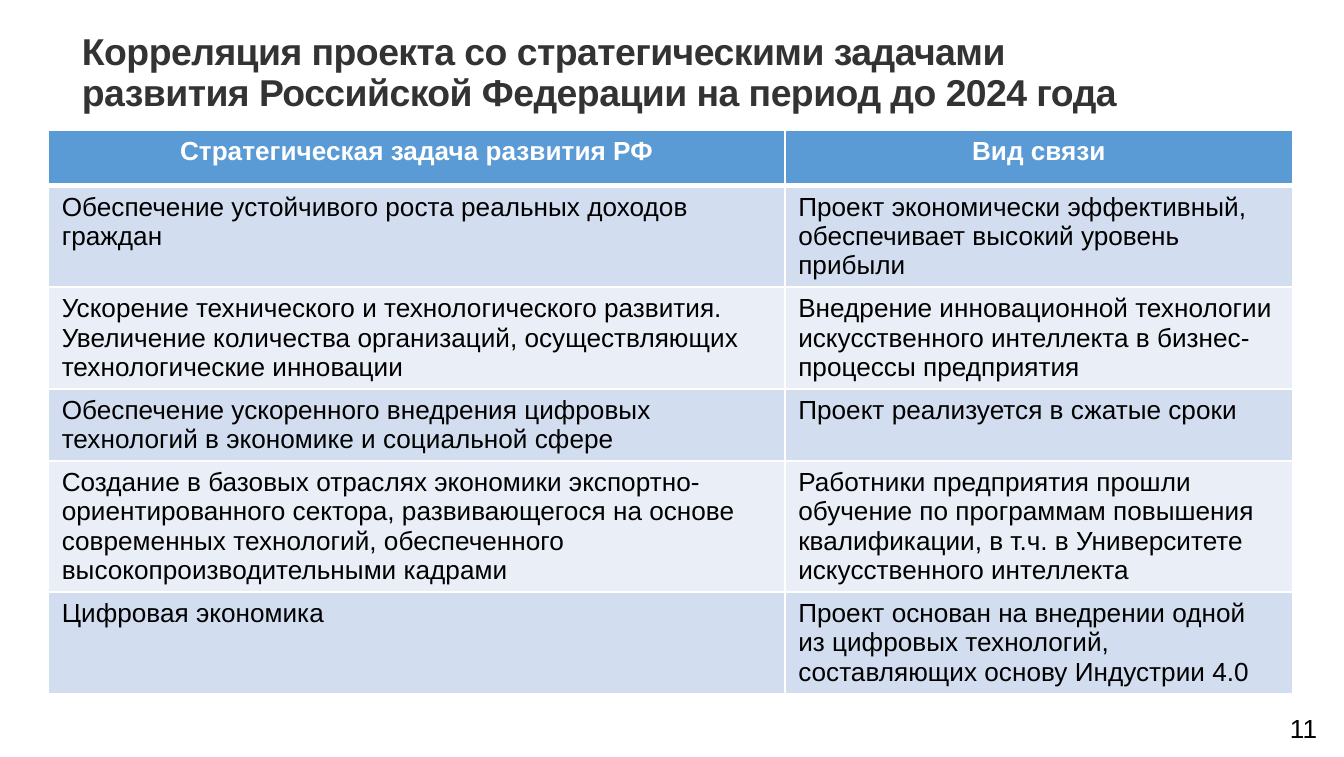
from lxml import etree
from pptx import Presentation
from pptx.dml.color import RGBColor
from pptx.enum.text import MSO_ANCHOR, MSO_AUTO_SIZE, PP_ALIGN
from pptx.oxml.ns import qn
from pptx.util import Inches, Pt

LEFT, CENTER = PP_ALIGN.LEFT, PP_ALIGN.CENTER
TOP = MSO_ANCHOR.TOP
NO_AUTOFIT, GROW = MSO_AUTO_SIZE.NONE, MSO_AUTO_SIZE.SHAPE_TO_FIT_TEXT

FONT = "Arial"
WHITE, BLACK, DARK_GREY = "FFFFFF", "000000", "333333"
HEADER_FILL = "5B9BD5"
BAND_FILLS = ("D2DEEF", "EAEFF7")
TITLE = ("Корреляция проекта со стратегическими задачами развития "
         "Российской Федерации на период до 2024 года")
COLUMN_WIDTHS = (5.48, 3.78)
ROW_HEIGHT = 0.41
ROWS = [
    ("Стратегическая задача развития РФ", "Вид связи"),
    ("Обеспечение устойчивого роста реальных доходов граждан",
     "Проект экономически эффективный, обеспечивает высокий уровень прибыли"),
    ("Ускорение технического и технологического развития. Увеличение количества "
     "организаций, осуществляющих технологические инновации",
     "Внедрение инновационной технологии искусственного интеллекта "
     "в бизнес-процессы предприятия"),
    ("Обеспечение ускоренного внедрения цифровых технологий "
     "в экономике и социальной сфере",
     "Проект реализуется в сжатые сроки"),
    ("Создание в базовых отраслях экономики экспортно-ориентированного сектора, "
     "развивающегося на основе современных технологий, обеспеченного "
     "высокопроизводительными кадрами",
     "Работники предприятия прошли обучение по программам повышения квалификации, "
     "в т.ч. в Университете искусственного интеллекта"),
    ("Цифровая экономика",
     "Проект основан на внедрении одной из цифровых технологий, "
     "составляющих основу Индустрии 4.0"),
]


def color(hex_string):
    """Turn a hex string into a colour."""
    return RGBColor.from_string(hex_string)


def set_text(text_frame, text, size, hex_string, bold=False, alignment=LEFT):
    """Write one formatted paragraph and return it."""
    text_frame.text = text
    paragraph = text_frame.paragraphs[0]
    paragraph.alignment = alignment
    font = paragraph.runs[0].font
    font.name, font.size, font.bold = FONT, Pt(size), bold
    font.color.rgb = color(hex_string)
    return paragraph


def add_title(slide, left, top, width, height):
    """Place the slide title in its placeholder."""
    title = slide.shapes.title
    title.left, title.top = Inches(left), Inches(top)
    title.width, title.height = Inches(width), Inches(height)
    frame = title.text_frame
    frame.margin_left = frame.margin_top = frame.margin_right = frame.margin_bottom = 0
    frame.vertical_anchor = TOP
    frame.word_wrap = True
    frame.auto_size = NO_AUTOFIT
    paragraph = set_text(frame, TITLE, 20, DARK_GREY, bold=True)
    paragraph.line_spacing = 0.9
    paragraph.space_before = Pt(0)
    paragraph.runs[0].font._element.set("spc", "-30")


def set_borders(cell, widths):
    """Draw white borders, with widths in points for each side."""
    properties = cell._tc.get_or_add_tcPr()
    for side, width in widths.items():
        line = etree.SubElement(properties, qn(f"a:ln{side}"), w=str(Pt(width)))
        fill = etree.SubElement(line, qn("a:solidFill"))
        etree.SubElement(fill, qn("a:srgbClr"), val=WHITE)


def add_task_table(slide, left, top, width, height):
    """Place the table of strategic tasks and their links to the project."""
    frame = slide.shapes.add_table(len(ROWS), len(COLUMN_WIDTHS), Inches(left),
                                   Inches(top), Inches(width), Inches(height))
    table = frame.table
    for column, column_width in zip(table.columns, COLUMN_WIDTHS):
        column.width = Inches(column_width)
    for row_index, texts in enumerate(ROWS):
        table.rows[row_index].height = Inches(ROW_HEIGHT)
        header = row_index == 0
        fill = HEADER_FILL if header else BAND_FILLS[(row_index - 1) % 2]
        borders = {"L": 1, "R": 1, "T": 3 if row_index == 1 else 1,
                   "B": 3 if header else 1}
        for column_index, text in enumerate(texts):
            cell = table.cell(row_index, column_index)
            set_borders(cell, borders)
            cell.fill.solid()
            cell.fill.fore_color.rgb = color(fill)
            set_text(cell.text_frame, text, 14, WHITE if header else BLACK,
                     bold=header, alignment=CENTER if header else LEFT)
    frame.width, frame.height = Inches(width), Inches(height)


def add_page_number(slide, left, top, width, height):
    """Place the page number in the bottom corner."""
    box = slide.shapes.add_textbox(Inches(left), Inches(top),
                                   Inches(width), Inches(height))
    box.text_frame.word_wrap = True
    box.text_frame.auto_size = GROW
    set_text(box.text_frame, "11", 14, BLACK)


def main():
    """Build and save the slide."""
    presentation = Presentation()
    presentation.slide_width, presentation.slide_height = Inches(10), Inches(5.63)
    slide = presentation.slides.add_slide(presentation.slide_layouts[5])
    add_title(slide, 0.61, 0.25, 7.83, 0.53)
    add_task_table(slide, 0.36, 0.97, 9.27, 4.41)
    add_page_number(slide, 9.5, 5.25, 0.47, 0.34)
    presentation.save("out.pptx")


if __name__ == "__main__":
    main()
